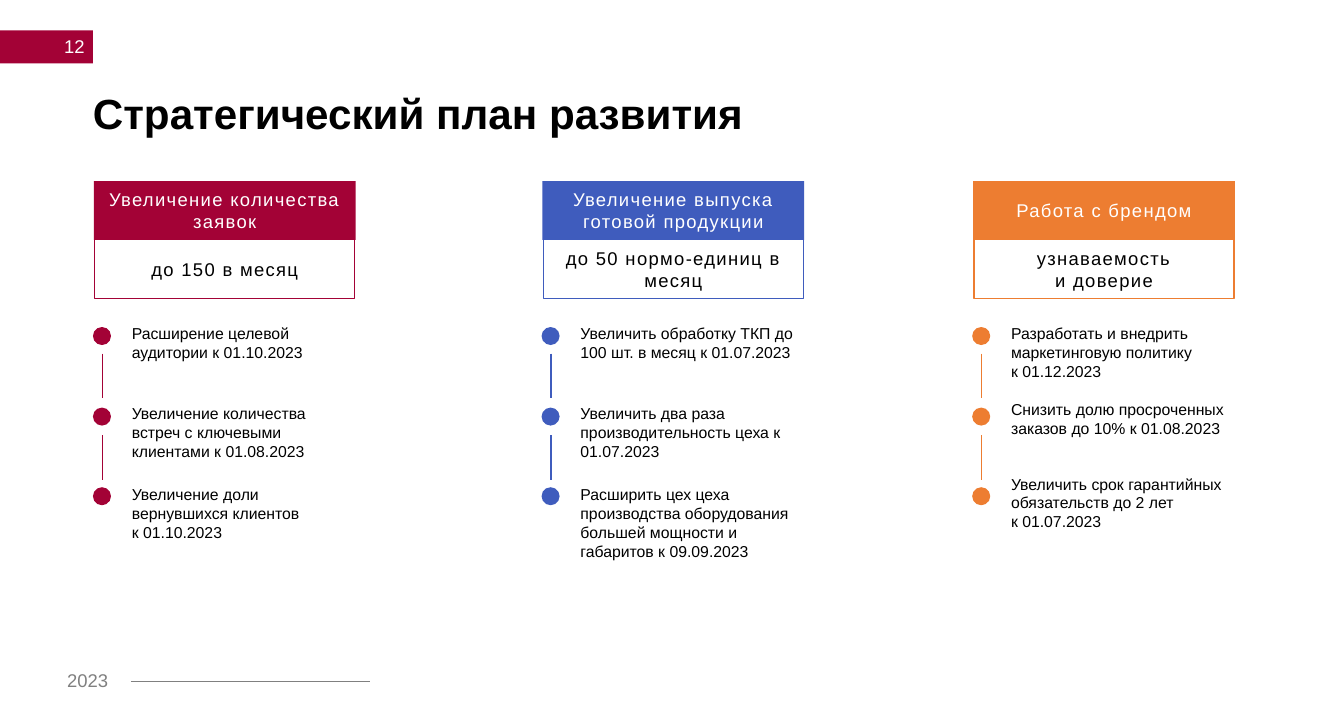
from copy import deepcopy

from pptx import Presentation
from pptx.dml.color import RGBColor
from pptx.enum.shapes import MSO_CONNECTOR, MSO_SHAPE
from pptx.enum.text import MSO_ANCHOR, PP_ALIGN
from pptx.oxml.ns import qn
from pptx.util import Inches, Pt
from lxml import etree

RECT, OVAL = MSO_SHAPE.RECTANGLE, MSO_SHAPE.OVAL
LINE = MSO_CONNECTOR.STRAIGHT
LEFT, MID, RIGHT = PP_ALIGN.LEFT, PP_ALIGN.CENTER, PP_ALIGN.RIGHT
TOP, CENTER = MSO_ANCHOR.TOP, MSO_ANCHOR.MIDDLE

RED, BLUE, ORANGE = "A30236", "3F5CBD", "ED7D31"
BLACK, WHITE, GRAY = "000000", "FFFFFF", "808080"

# Each plan: left edge, colour, goal, target, steps, gaps after steps in points
PLANS = [
    (0.98, RED, "Увеличение количества заявок", "до 150 в месяц",
     ["Расширение целевой аудитории к 01.10.2023",
      "Увеличение количества встреч с ключевыми клиентами к 01.08.2023",
      "Увеличение доли вернувшихся клиентов\vк 01.10.2023"],
     [32, 18, 0]),
    (5.71, BLUE, "Увеличение выпуска готовой продукции",
     "до 50 нормо-единиц в месяц",
     ["Увеличить обработку ТКП до 100 шт. в месяц к 01.07.2023",
      "Увеличить два раза производительность цеха к 01.07.2023",
      "Расширить цех цеха производства оборудования большей мощности "
      "и габаритов к 09.09.2023"],
     [32, 18, 0]),
    (10.25, ORANGE, "Работа с брендом", "узнаваемость\vи доверие",
     ["Разработать и внедрить маркетинговую политику\vк 01.12.2023",
      "Снизить долю просроченных заказов до 10% к 01.08.2023",
      "Увеличить срок гарантийных обязательств до 2 лет\vк 01.07.2023"],
     [14, 28, 0]),
]


def color(code):
    return RGBColor.from_string(code)


def write(frame, lines, size=12, ink=BLACK, bold=False, align=LEFT,
          anchor=TOP, track=0, gaps=None, pitch=None, inset=True):
    """Fill a text frame, one paragraph per line."""
    frame.word_wrap = True
    frame.vertical_anchor = anchor
    if not inset:
        frame.margin_left = frame.margin_right = 0
        frame.margin_top = frame.margin_bottom = 0
    for i, line in enumerate(lines):
        para = frame.paragraphs[0] if i == 0 else frame.add_paragraph()
        para.text = line
        para.alignment = align
        if pitch:
            para.line_spacing = pitch
        if gaps:
            para.space_after = Pt(gaps[i])
        for run in para.runs:
            font = run.font
            font.name, font.size, font.bold = "Arial", Pt(size), bold
            font.color.rgb = color(ink)
            props = run._r.get_or_add_rPr()
            if track:
                props.set("spc", str(track * 100))
        # Line breaks take the format of the text
        for brk in para._p.findall(qn("a:br")):
            brk.insert(0, deepcopy(props))


class Board:
    def __init__(self, slide):
        self.slide = slide
        self.shapes = slide.shapes

    def shape(self, kind, x, y, w, h, fill=None, line=None):
        item = self.shapes.add_shape(
            kind, Inches(x), Inches(y), Inches(w), Inches(h))
        item.shadow.inherit = False
        if fill:
            item.fill.solid()
            item.fill.fore_color.rgb = color(fill)
        else:
            item.fill.background()
        if line:
            item.line.color.rgb = color(line)
            item.line.width = Pt(1)
        else:
            item.line.fill.background()
        return item

    def text(self, x, y, w, h, lines, **style):
        box = self.shapes.add_textbox(
            Inches(x), Inches(y), Inches(w), Inches(h))
        write(box.text_frame, lines, **style)

    def rule(self, x1, y1, x2, y2, ink, width=1):
        item = self.shapes.add_connector(
            LINE, Inches(x1), Inches(y1), Inches(x2), Inches(y2))
        item.line.color.rgb = color(ink)
        item.line.width = Pt(width)
        etree.SubElement(item._element.spPr, qn("a:effectLst"))

    def plan(self, x, ink, goal, target, steps, gaps):
        # Goal and target
        head = self.shape(RECT, x + 0.01, 1.91, 2.76, 0.62, fill=ink)
        write(head.text_frame, [goal], size=14, ink=WHITE, align=MID,
              anchor=CENTER, track=1)
        body = self.shape(RECT, x + 0.02, 2.53, 2.74, 0.62, line=ink)
        write(body.text_frame, [target], size=14, align=MID,
              anchor=CENTER, track=1)
        # Steps
        self.text(x + 0.41, 3.42, 2.37, 2.46, steps, gaps=gaps, inset=False)
        # Dots and the links between them
        for y in (3.45, 4.3, 5.14):
            self.shape(OVAL, x, y, 0.19, 0.19, fill=ink)
        for y in (3.73, 4.59):
            self.rule(x + 0.1, y, x + 0.1, y + 0.47, ink)


def main():
    deck = Presentation()
    deck.slide_width, deck.slide_height = Inches(14.17), Inches(7.48)
    board = Board(deck.slides.add_slide(deck.slide_layouts[6]))

    # Page number
    board.shape(RECT, 0, 0.32, 0.98, 0.35, fill=RED)
    board.text(0.18, 0.29, 0.81, 0.4, ["12"], size=14, ink=WHITE,
               align=RIGHT, anchor=CENTER)

    # Footer
    board.text(0.61, 7.01, 0.67, 0.34, ["2023"], size=14, ink=GRAY)
    board.rule(1.38, 7.19, 3.9, 7.19, GRAY, width=1.5)

    # Title
    board.text(0.98, 0.98, 12.41, 0.78, ["Стратегический план развития"],
               size=32, bold=True, pitch=0.9, inset=False)

    # Plans
    for plan in PLANS:
        board.plan(*plan)

    deck.save("out.pptx")


if __name__ == "__main__":
    main()
